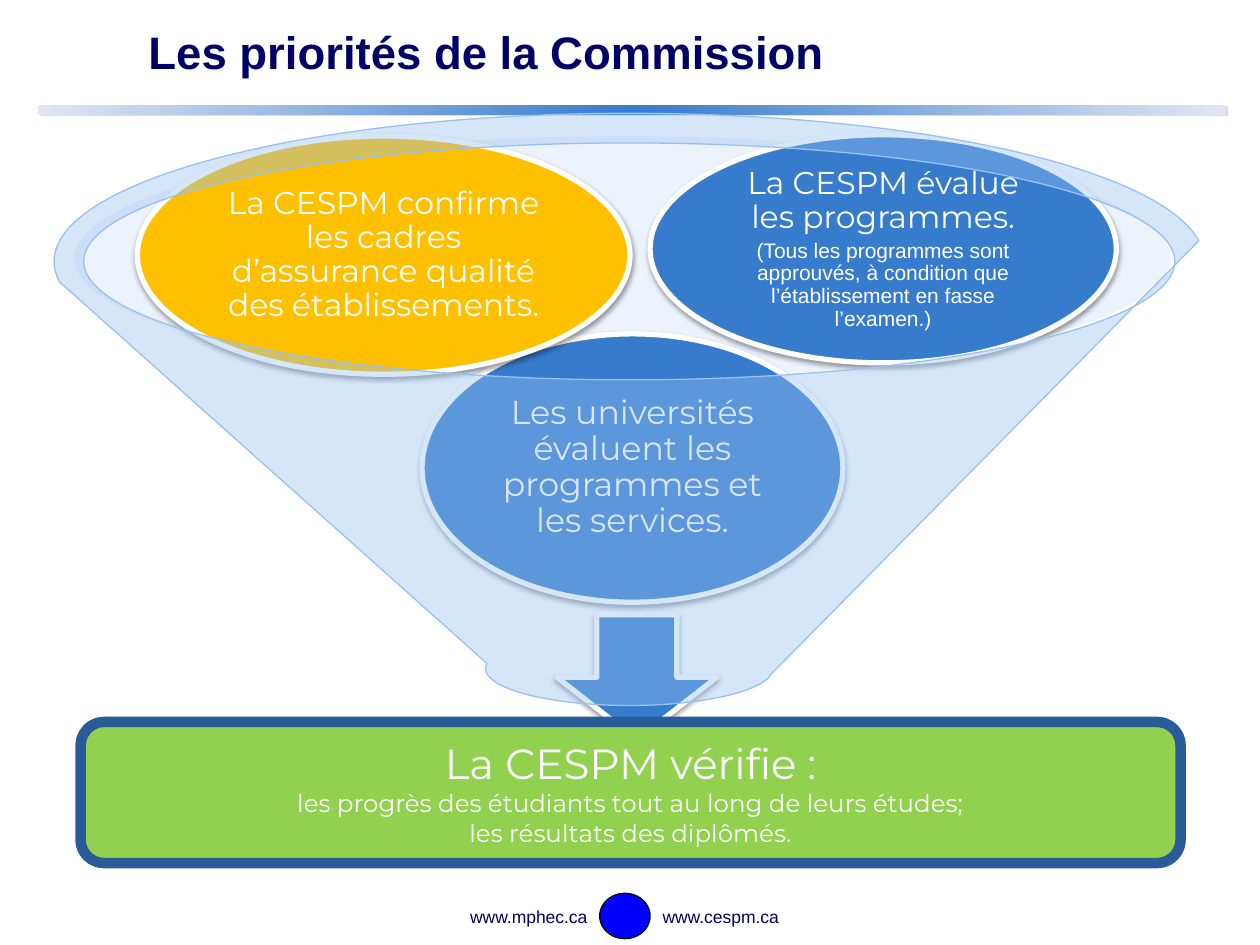
import pptx
import pptx.util
import pptx.dml.color
import pptx.enum.shapes
import pptx.enum.text
import pptx.oxml
import pptx.oxml.ns
from lxml import etree

Inches = pptx.util.Inches
Pt = pptx.util.Pt
SHAPE = pptx.enum.shapes.MSO_SHAPE
ALIGN = pptx.enum.text.PP_ALIGN
MIDDLE = pptx.enum.text.MSO_ANCHOR.MIDDLE
qn = pptx.oxml.ns.qn

COLORS = {
    "navy": "000066", "blue": "377BCD", "dark_blue": "295B98", "pale": "E0E6F3",
    "rim": "D4E3F9", "funnel": "98C1F2", "gold": "FFC000", "green": "92D050",
    "emblem": "0000FF", "white": "FFFFFF", "black": "000000", "gray": "DDDDDD",
}


def rgb(name):
    return pptx.dml.color.RGBColor.from_string(COLORS[name])


class SlideBuilder:
    """Holds the fonts and the slide being drawn."""

    heading_font = "Arial"
    body_font = "Montserrat"

    def __init__(self, slide):
        self.slide = slide

    def shape(self, kind, box, fill, line=None, width=0.75, alpha=None):
        sp = self.slide.shapes.add_shape(kind, *map(Inches, box))
        sp.shadow.inherit = False
        sp.fill.solid()
        sp.fill.fore_color.rgb = rgb(fill)
        if alpha is not None:
            color = sp._element.spPr.find(qn("a:solidFill"))[0]
            etree.SubElement(color, qn("a:alpha"), val=str(alpha * 1000))
        if line:
            sp.line.color.rgb = rgb(line)
            sp.line.width = Pt(width)
        else:
            sp.line.fill.background()
        return sp

    def shadow(self, sp, color, alpha, blur, dist, angle):
        effects = sp._element.spPr.find(qn("a:effectLst"))
        outer = etree.SubElement(
            effects, qn("a:outerShdw"), blurRad=str(Pt(blur)), dist=str(Pt(dist)),
            dir=str(angle * 60000), algn="ctr", rotWithShape="0")
        clr = etree.SubElement(outer, qn("a:srgbClr"), val=COLORS[color])
        etree.SubElement(clr, qn("a:alpha"), val=str(alpha * 1000))

    def raised(self, kind, box, fill):
        """A white-edged shape with a soft shadow below it."""
        sp = self.shape(kind, box, fill, "white", 3)
        self.shadow(sp, "black", 38, 3.1, 1.6, 90)
        return sp

    def gradient_bar(self, box, stops):
        sp = self.shape(SHAPE.RECTANGLE, box, "blue")
        self.shadow(sp, "gray", 100, 0, 2.2, 27)
        solid = sp._element.spPr.find(qn("a:solidFill"))
        grad = etree.Element(qn("a:gradFill"), rotWithShape="1")
        stop_list = etree.SubElement(grad, qn("a:gsLst"))
        for position, color in stops:
            gs = etree.SubElement(stop_list, qn("a:gs"), pos=str(position * 1000))
            etree.SubElement(gs, qn("a:srgbClr"), val=COLORS[color])
        etree.SubElement(grad, qn("a:lin"), ang="0", scaled="1")
        solid.getparent().replace(solid, grad)

    def caption(self, sp, lines, inset, spacing=None, after=0):
        """Fill a shape with centred white lines of (text, size, font)."""
        tf = sp.text_frame
        tf.word_wrap = True
        tf.vertical_anchor = MIDDLE
        tf.margin_left = tf.margin_right = Inches(inset)
        tf.margin_top = tf.margin_bottom = Inches(inset)
        for i, (text, size, font) in enumerate(lines):
            p = tf.add_paragraph() if i else tf.paragraphs[0]
            p.text = text
            p.alignment = ALIGN.CENTER
            p.line_spacing = spacing
            p.space_after = Pt(after)
            self.style(p, size, font, "white")

    def style(self, p, size, font, color, bold=False):
        p.font.size = Pt(size)
        p.font.name = font
        p.font.bold = bold
        p.font.color.rgb = rgb(color)

    def label(self, box, text, size, align=ALIGN.LEFT, bold=False):
        tf = self.slide.shapes.add_textbox(*map(Inches, box)).text_frame
        tf.word_wrap = True
        tf.vertical_anchor = MIDDLE
        p = tf.paragraphs[0]
        p.text = text
        p.alignment = align
        p.line_spacing = 0.9 if bold else 1.0
        self.style(p, size, self.heading_font, "navy", bold)

    def bubble(self, box, fill, lines):
        sp = self.raised(SHAPE.OVAL, box, fill)
        self.caption(sp, lines, 0.03, 0.9, 3 if len(lines) > 1 else 0)


def main():
    prs = pptx.Presentation()
    prs.slide_width, prs.slide_height = Inches(10), Inches(7.5)
    b = SlideBuilder(prs.slides.add_slide(prs.slide_layouts[6]))
    body, heading = b.body_font, b.heading_font

    b.gradient_bar((0.3, 0.83, 9.42, 0.08), [(0, "pale"), (50, "blue"), (100, "pale")])
    b.label((1.08, 0.03, 8.63, 0.81), "Les priorités de la Commission", 26, bold=True)

    b.shape(SHAPE.OVAL, (4.76, 7.09, 0.4, 0.36), "emblem", "black")
    b.label((2.95, 7.14, 1.81, 0.27), "www.mphec.ca", 10, ALIGN.RIGHT)
    b.label((5.16, 7.14, 1.25, 0.27), "www.cespm.ca", 10)

    b.shape(SHAPE.OVAL, (0.59, 1.08, 8.7, 1.94), "rim", alpha=40)
    b.raised(SHAPE.DOWN_ARROW, (4.42, 4.88, 1.27, 0.99), "blue")
    result = b.shape(SHAPE.FLOWCHART_ALTERNATE_PROCESS, (0.64, 5.73, 8.73, 1.12),
                     "green", "dark_blue", 6)
    b.caption(result, [
        ("La CESPM vérifie :", 24, body),
        ("les progrès des étudiants tout au long de leurs études;", 14, body),
        ("les résultats des diplômés.", 14, body),
    ], 0.19)

    b.bubble((3.35, 2.65, 3.34, 2.13), "blue", [
        ("Les universités évaluent les programmes et les services.", 19, body)])
    b.bubble((1.09, 1.08, 3.91, 1.89), "gold", [
        ("La CESPM confirme les cadres d’assurance qualité des établissements.", 18, body)])
    b.bubble((5.16, 1.07, 3.7, 1.81), "blue", [
        ("La CESPM évalue les programmes.", 18, body),
        ("(Tous les programmes sont approuvés, à condition que l’établissement "
         "en fasse l’examen.)", 12, heading)])
    b.shape(SHAPE.FUNNEL, (0.43, 0.9, 9.13, 4.7), "funnel", "funnel", alpha=40)

    prs.save("out.pptx")


if __name__ == "__main__":
    main()
